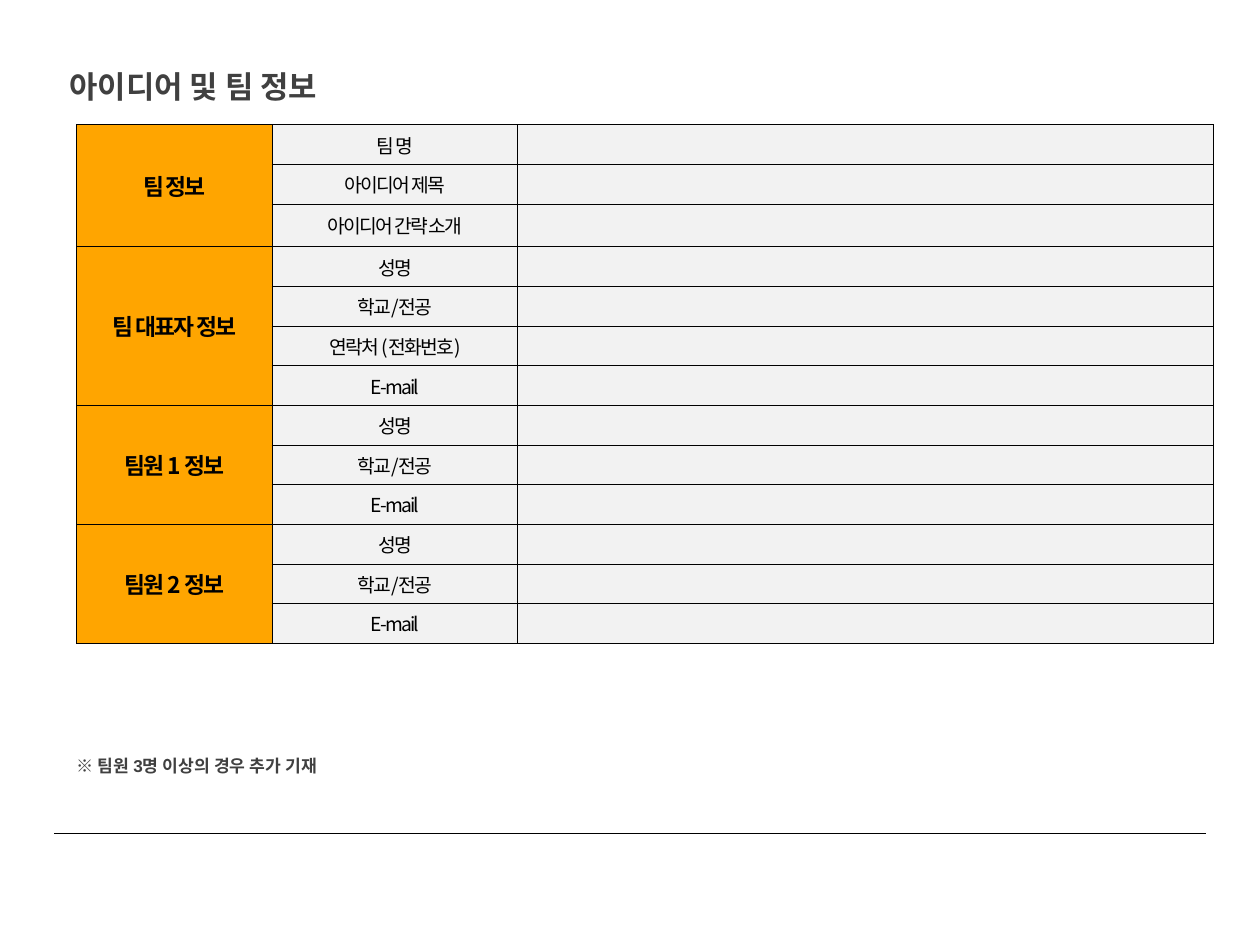
"""Build the idea and team information form slide."""
import pptx
import pptx.dml.color
import pptx.enum.shapes
import pptx.enum.text
import pptx.oxml.ns
import pptx.util
from lxml import etree

Inches = pptx.util.Inches
Pt = pptx.util.Pt
RGBColor = pptx.dml.color.RGBColor
Align = pptx.enum.text.PP_ALIGN
Anchor = pptx.enum.text.MSO_ANCHOR
qn = pptx.oxml.ns.qn

BLACK = RGBColor(0x00, 0x00, 0x00)
GRAY = RGBColor(0x40, 0x40, 0x40)
ORANGE = RGBColor(0xFF, 0xA5, 0x00)
LIGHT = RGBColor(0xF2, 0xF2, 0xF2)
KOREAN_FONT = "Noto Sans CJK KR"

MEMBER_FIELDS = ["성명", "학교/전공", "E-mail"]
SECTIONS = [
    ("팀 정보", ["팀 명", "아이디어 제목", "아이디어 간략 소개"]),
    ("팀 대표자 정보", ["성명", "학교/전공", "연락처 (전화번호)", "E-mail"]),
    ("팀원 1 정보", MEMBER_FIELDS),
    ("팀원 2 정보", MEMBER_FIELDS),
]
COLUMN_WIDTHS = [1.55, 1.95, 5.52]
TABLE_HEIGHT = 4.09
INTRODUCTION_ROW, INTRODUCTION_HEIGHT = 2, 0.34


def write_text(paragraph, text, size, color, font_name, bold, spacing=0):
    """Fill a paragraph with one run of formatted Korean text."""
    run = paragraph.add_run()
    run.text = text
    font = paragraph.font
    font.size, font.bold, font.name = Pt(size), bold, font_name
    font.color.rgb = color
    for properties in (font._element, run.font._element):
        etree.SubElement(properties, qn("a:ea"), typeface=KOREAN_FONT)
        if spacing:
            properties.set("spc", str(spacing * 100))


def format_caption(shape, left, top, text, size):
    """Place a shape and give it one line of bold gray text."""
    shape.left, shape.top = Inches(left), Inches(top)
    shape.width, shape.height = Inches(3.05), Inches(0.52)
    frame = shape.text_frame
    frame.word_wrap = True
    frame.auto_size = pptx.enum.text.MSO_AUTO_SIZE.NONE
    frame.vertical_anchor = Anchor.MIDDLE
    paragraph = frame.paragraphs[0]
    paragraph.alignment = Align.LEFT
    paragraph.line_spacing = 0.9
    write_text(paragraph, text, size, GRAY, "Arial", True)


def add_rule(slide):
    """Draw the thin footer line."""
    line = slide.shapes.add_connector(
        pptx.enum.shapes.MSO_CONNECTOR.STRAIGHT,
        Inches(0.43), Inches(6.61), Inches(9.57), Inches(6.61))
    line.line.color.rgb = BLACK
    line.line.width = Pt(0.35)
    etree.SubElement(line._element.spPr, qn("a:effectLst"))


def format_cell(cell, fill):
    """Give a cell its fill, margins and thin black borders."""
    cell.fill.solid()
    cell.fill.fore_color.rgb = fill
    cell.vertical_anchor = Anchor.MIDDLE
    cell.margin_left = cell.margin_right = Inches(0.04)
    cell.margin_top = cell.margin_bottom = Inches(0.04)
    properties = cell._tc.get_or_add_tcPr()
    for index, side in enumerate(["lnL", "lnR", "lnT", "lnB"]):
        border = etree.Element(qn("a:" + side), w=str(Pt(0.5)))
        solid = etree.SubElement(border, qn("a:solidFill"))
        etree.SubElement(solid, qn("a:srgbClr"), val=str(BLACK))
        properties.insert(index, border)
    paragraph = cell.text_frame.paragraphs[0]
    paragraph.font.size = Pt(11)
    etree.SubElement(paragraph._p, qn("a:endParaRPr"), sz="1100")


def write_cell(cell, text, size, bold):
    """Centre a label in a cell."""
    paragraph = cell.text_frame.paragraphs[0]
    paragraph.alignment = Align.CENTER
    write_text(paragraph, text, size, BLACK, KOREAN_FONT, bold, -1)


def add_form(slide):
    """Add the form table with one merged heading per section."""
    row_count = sum(len(fields) for _, fields in SECTIONS)
    table = slide.shapes.add_table(
        row_count, len(COLUMN_WIDTHS), Inches(0.61), Inches(0.99),
        Inches(sum(COLUMN_WIDTHS)), Inches(TABLE_HEIGHT)).table
    table.first_row = table.horz_banding = False
    for column, width in zip(table.columns, COLUMN_WIDTHS):
        column.width = Inches(width)
    for row in table.rows:
        row.height = Inches(TABLE_HEIGHT / row_count)
        for cell, fill in zip(row.cells, [ORANGE, LIGHT, LIGHT]):
            format_cell(cell, fill)
    table.rows[INTRODUCTION_ROW].height = Inches(INTRODUCTION_HEIGHT)
    first = 0
    for heading, fields in SECTIONS:
        last = first + len(fields) - 1
        table.cell(first, 0).merge(table.cell(last, 0))
        write_cell(table.cell(first, 0), heading, 13, True)
        for index, field in enumerate(fields, first):
            write_cell(table.cell(index, 1), field, 11, False)
        first = last + 1


def main():
    """Create the presentation and save it."""
    presentation = pptx.Presentation()
    presentation.slide_width, presentation.slide_height = Inches(10), Inches(7.5)
    slide = presentation.slides.add_slide(presentation.slide_layouts[5])
    add_rule(slide)
    add_form(slide)
    format_caption(slide.shapes.title, 0.45, 0.44, "아이디어 및 팀 정보", 17.6)
    note = slide.shapes.add_textbox(0, 0, 0, 0)
    format_caption(note, 0.51, 5.83, "※ 팀원 3명 이상의 경우 추가 기재", 9.8)
    presentation.save("out.pptx")


if __name__ == "__main__":
    main()
